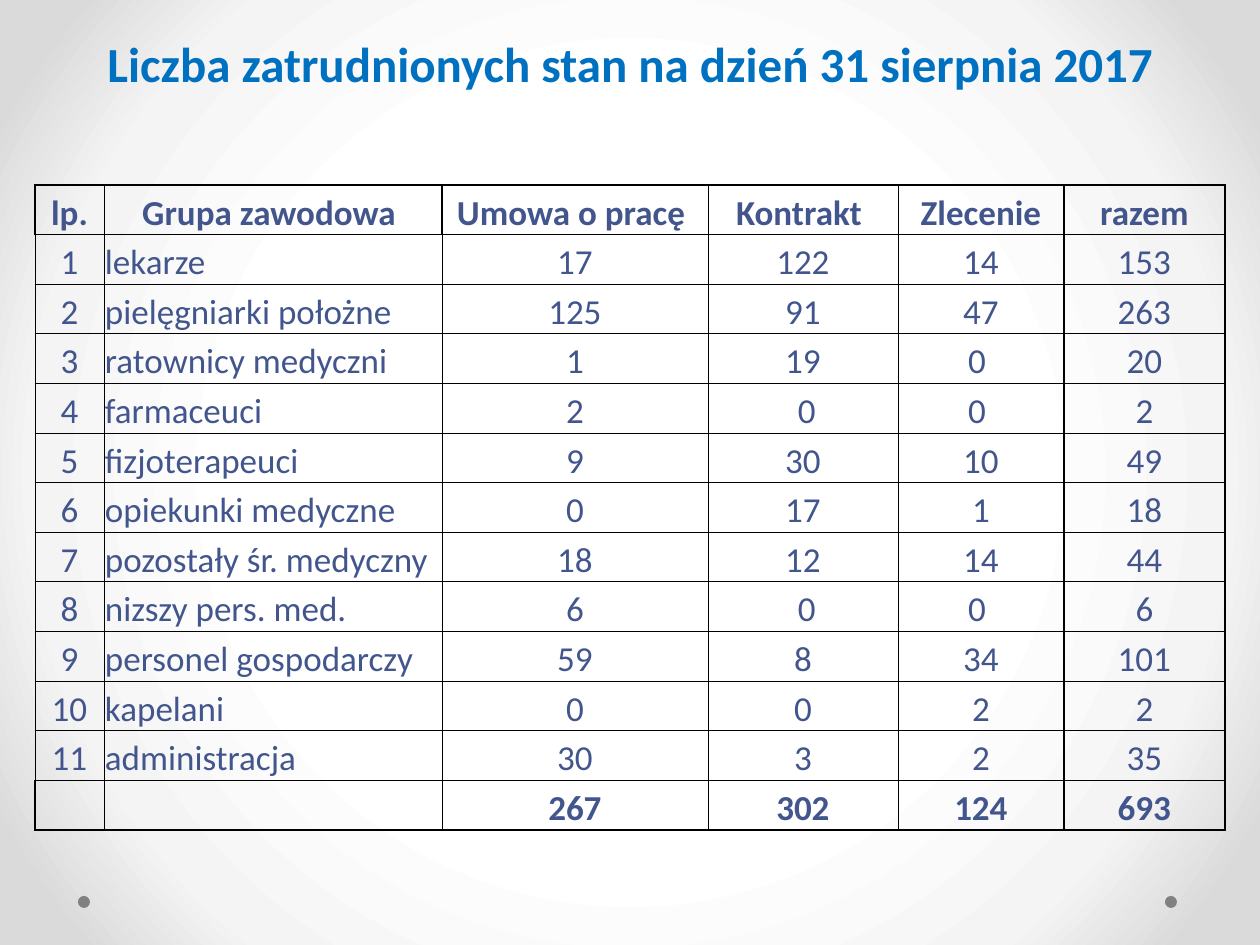
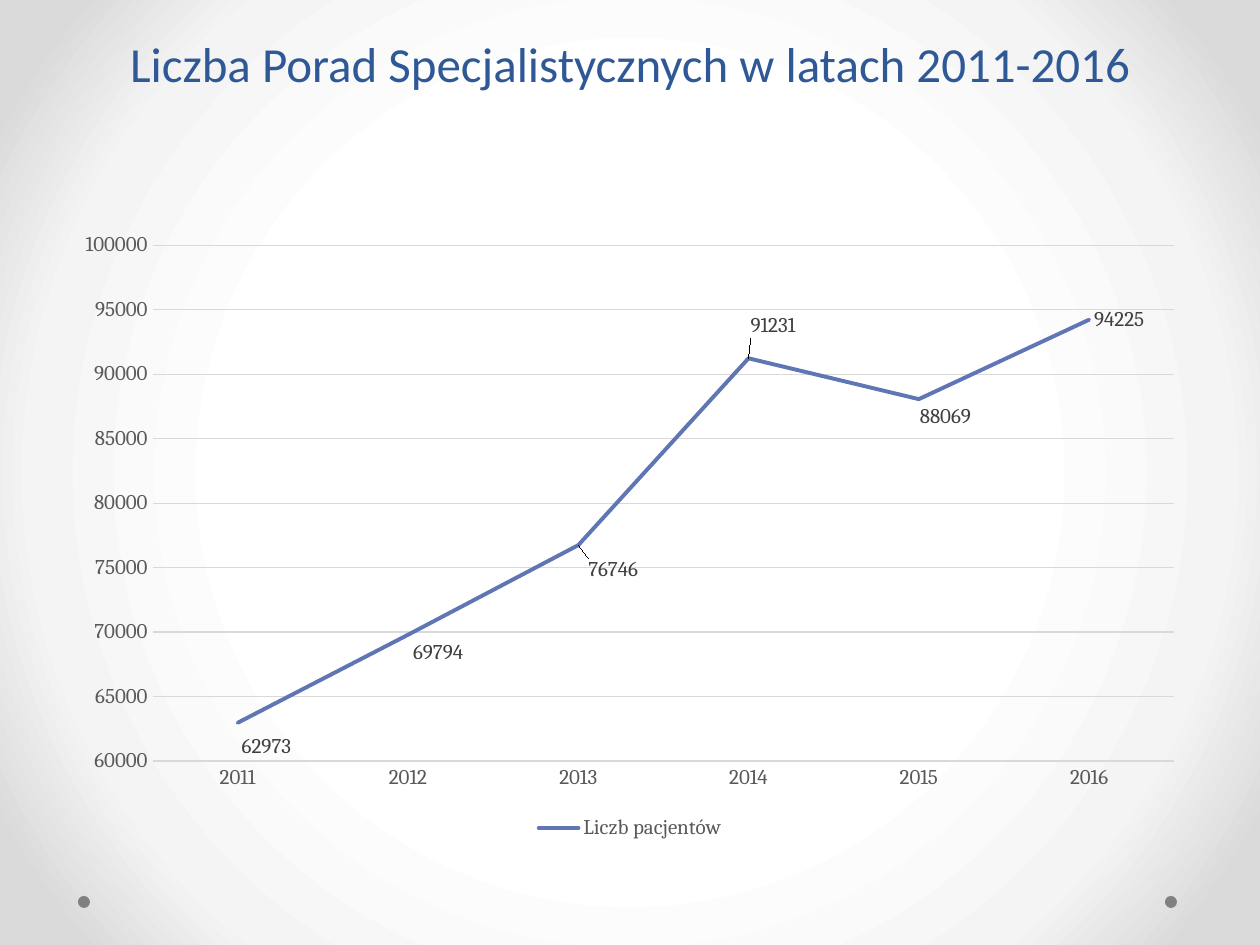
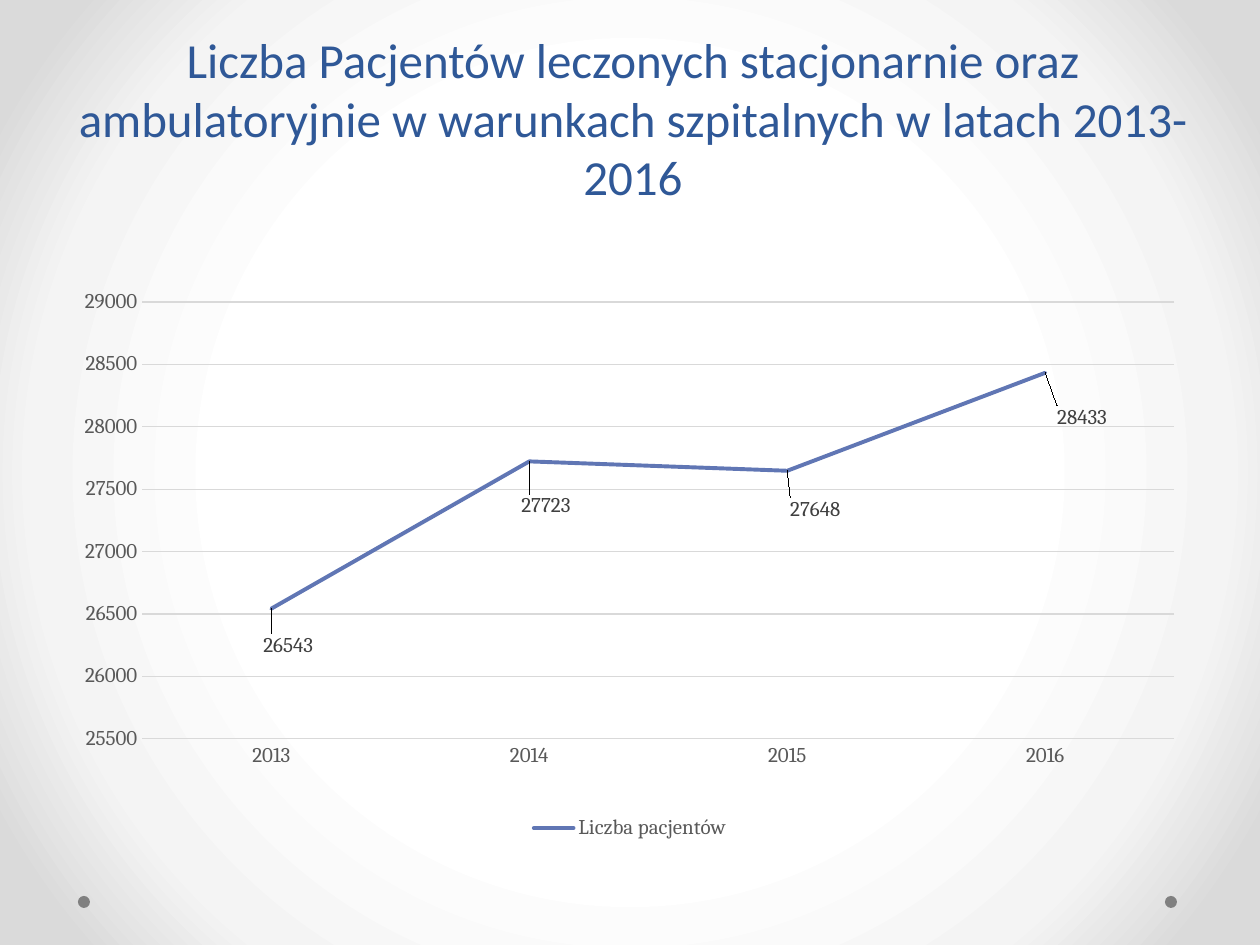
from dataclasses import dataclass

from pptx import Presentation
from pptx import util as u
from pptx.chart.data import CategoryChartData
from pptx.dml.color import RGBColor
from pptx.enum import chart as charts, shapes, text
from pptx.oxml import parse_xml
from pptx.oxml.ns import nsdecls

SCALE = 914400 / 126
COLORS = {
    "staff_title": "0070C0",
    "title": "2F5897",
    "cell": "42568D",
    "border": "000000",
    "dot": "808080",
    "axis": "595959",
    "grid": "D9D9D9",
    "trend": "6076B4",
    "value": "404040",
}
BACKGROUND = {50: "FFFFFF", 76: "F4F4F4", 92: "DADADA"}
DOT_LEFTS = (78, 1165)
DOT_TOP, DOT_SIZE = 896, 12
CHART_LEFT, CHART_TOP, CHART_WIDTH, CHART_HEIGHT = 63, 221, 1134, 624

COLUMN_WIDTHS = (69, 338, 266, 190, 166, 161)
HEADER = ("lp.", "Grupa zawodowa ", "Umowa o pracę ", "Kontrakt ", "Zlecenie", "razem")
STAFF = (
    ("lekarze", "17", "122", "14", "153"),
    ("pielęgniarki położne", "125", "91", "47", "263"),
    ("ratownicy medyczni", "1", "19", "0 ", "20"),
    ("farmaceuci", "2", " 0", "0 ", "2"),
    ("fizjoterapeuci", "9", "30", "10", "49"),
    ("opiekunki medyczne", "0", "17", "1", "18"),
    ("pozostały śr. medyczny", "18", "12", "14", "44"),
    ("nizszy pers. med.", "6", " 0", "0 ", "6"),
    ("personel gospodarczy", "59", "8", "34", "101"),
    ("kapelani", "0", "0", "2", "2"),
    ("administracja", "30", "3", "2", "35"),
)
TOTALS = ("", "", "267", "302", "124", "693")


@dataclass(frozen=True)
class Title:
    wording: str
    left: int = 63
    top: int = 0
    color: str = "title"
    bold: bool = False


@dataclass(frozen=True)
class Reading:
    year: str
    count: int
    shift_x: int = 0
    shift_y: int = 0


@dataclass(frozen=True)
class Trend:
    title: Title
    legend: str
    readings: tuple[Reading, ...]
    minimum: int | None = None
    plot_area: tuple[float, float, float, float] | None = None


TRENDS = (
    Trend(
        Title("Liczba Porad Specjalistycznych w latach 2011-2016"),
        "Liczb pacjentów",
        (
            Reading("2011", 62973, -1, 24),
            Reading("2012", 69794, 0, 18),
            Reading("2013", 76746, 5, 25),
            Reading("2014", 91231, -3, -32),
            Reading("2015", 88069, -4, 18),
            Reading("2016", 94225),
        ),
        minimum=60000,
    ),
    Trend(
        Title(
            "Liczba Pacjentów leczonych stacjonarnie oraz ambulatoryjnie "
            "w warunkach szpitalnych w latach 2013-2016",
            left=66,
            top=55,
        ),
        "Liczba pacjentów",
        (
            Reading("2013", 26543, -13, 37),
            Reading("2014", 27723, -13, 45),
            Reading("2015", 27648, -2, 39),
            Reading("2016", 28433, 7, 45),
        ),
        plot_area=(0.07, 0.13, 0.91, 0.7),
    ),
)


def px(length: int) -> u.Emu:
    return u.Emu(round(length * SCALE))


def rgb(name: str) -> RGBColor:
    return RGBColor.from_string(COLORS[name])


def style_font(font, size: int, color: str, face: str, bold: bool = False) -> None:
    font.size = u.Pt(size)
    font.name = face
    font.bold = bold
    font.color.rgb = rgb(color)


def style_line(line, color: str, width: float) -> None:
    line.color.rgb = rgb(color)
    line.width = u.Pt(width)


def set_background(master) -> None:
    master.background.fill.solid()
    properties = master.element.xpath(".//p:bgPr")[0]
    stops = "".join(
        f'<a:gs pos="{place * 1000}"><a:srgbClr val="{color}"/></a:gs>'
        for place, color in BACKGROUND.items()
    )
    gradient = parse_xml(
        f'<a:gradFill {nsdecls("a")} rotWithShape="1"><a:gsLst>{stops}</a:gsLst>'
        '<a:path path="circle"><a:fillToRect l="50000" t="50000" r="50000" b="50000"/>'
        "</a:path></a:gradFill>"
    )
    properties.replace(properties[0], gradient)


def add_page(deck, title: Title):
    slide = deck.slides.add_slide(deck.slide_layouts[6])
    for left in DOT_LEFTS:
        dot = slide.shapes.add_shape(
            shapes.MSO_SHAPE.OVAL, px(left), px(DOT_TOP), px(DOT_SIZE), px(DOT_SIZE)
        )
        dot.shadow.inherit = False
        dot.fill.solid()
        dot.fill.fore_color.rgb = rgb("dot")
        dot.line.fill.background()
    frame = slide.shapes.add_textbox(px(title.left), px(title.top), px(1134), px(125)).text_frame
    frame.word_wrap = True
    frame.vertical_anchor = text.MSO_ANCHOR.MIDDLE
    heading = frame.paragraphs[0]
    heading.text = title.wording
    heading.alignment = text.PP_ALIGN.CENTER
    style_font(heading.font, 28, title.color, "Calibri", title.bold)
    return slide


def add_borders(cell, row: int, column: int, last_row: int, last_column: int) -> None:
    def across(edge: int) -> bool:
        return edge in (0, 1, last_row, last_row + 1)

    def down(edge: int) -> bool:
        return (
            edge >= last_column
            or (edge == 0 and row in (0, last_row))
            or (edge == 2 and row == 0)
        )

    heavy = {"L": down(column), "R": down(column + 1), "T": across(row), "B": across(row + 1)}
    properties = cell._tc.get_or_add_tcPr()
    for position, (side, is_heavy) in enumerate(heavy.items()):
        width = u.Pt(1 if is_heavy else 0.5)
        border = parse_xml(
            f'<a:ln{side} {nsdecls("a")} w="{width}"><a:solidFill>'
            f'<a:srgbClr val="{COLORS["border"]}"/></a:solidFill></a:ln{side}>'
        )
        properties.insert(position, border)


def add_staff_table(slide) -> None:
    rows = [HEADER, *((str(n), *group) for n, group in enumerate(STAFF, 1)), TOTALS]
    last_row, last_column = len(rows) - 1, len(HEADER) - 1
    table = slide.shapes.add_table(
        len(rows), len(HEADER), px(35), px(185), px(sum(COLUMN_WIDTHS)), px(645)
    ).table
    table.first_row = table.horz_banding = False
    for column, width in zip(table.columns, COLUMN_WIDTHS):
        column.width = px(width)
    for r, row in enumerate(rows):
        for c, wording in enumerate(row):
            cell = table.cell(r, c)
            cell.margin_left = cell.margin_right = cell.margin_top = px(1)
            cell.margin_bottom = 0
            cell.vertical_anchor = text.MSO_ANCHOR.BOTTOM
            cell.fill.background()
            entry = cell.text_frame.paragraphs[0]
            entry.text = wording
            is_group = c == 1 and 0 < r < last_row
            entry.alignment = text.PP_ALIGN.LEFT if is_group else text.PP_ALIGN.CENTER
            style_font(entry.font, 20, "cell", "Calibri", r in (0, last_row))
            add_borders(cell, r, c, last_row, last_column)


def manual_layout(values: dict[str, float], inner: bool = False):
    target = '<c:layoutTarget val="inner"/><c:xMode val="edge"/><c:yMode val="edge"/>'
    sizes = "".join(f'<c:{key} val="{value:.4f}"/>' for key, value in values.items())
    return parse_xml(
        f'<c:layout {nsdecls("c")}><c:manualLayout>{target if inner else ""}{sizes}'
        "</c:manualLayout></c:layout>"
    )


def style_axes(chart, minimum: int | None) -> None:
    for axis in (chart.category_axis, chart.value_axis):
        axis.major_tick_mark = axis.minor_tick_mark = charts.XL_TICK_MARK.NONE
        style_font(axis.tick_labels.font, 12, "axis", "Cambria")
    style_line(chart.category_axis.format.line, "grid", 0.75)
    chart.value_axis.format.line.fill.background()
    chart.value_axis.has_major_gridlines = True
    style_line(chart.value_axis.major_gridlines.format.line, "grid", 0.75)
    if minimum is not None:
        chart.value_axis.minimum_scale = minimum


def add_value_labels(chart, series, readings: tuple[Reading, ...]) -> None:
    series.data_labels.show_value = True
    for index, reading in enumerate(readings):
        label = series.points[index].data_label
        style_font(label.font, 12, "value", "Cambria")
        label.position = charts.XL_LABEL_POSITION.RIGHT
    for label, reading in zip(chart.element.xpath(".//c:dLbl"), readings):
        shift = {"x": reading.shift_x / CHART_WIDTH, "y": reading.shift_y / CHART_HEIGHT}
        label.insert(1, manual_layout(shift))


def add_trend_chart(slide, trend: Trend) -> None:
    data = CategoryChartData()
    data.categories = [reading.year for reading in trend.readings]
    data.add_series(trend.legend, [reading.count for reading in trend.readings])
    chart = slide.shapes.add_chart(
        charts.XL_CHART_TYPE.LINE,
        px(CHART_LEFT), px(CHART_TOP), px(CHART_WIDTH), px(CHART_HEIGHT),
        data,
    ).chart
    chart.has_title = False
    chart.font.size = u.Pt(10)
    chart.font.name = "Cambria"
    chart.has_legend = True
    chart.legend.position = charts.XL_LEGEND_POSITION.BOTTOM
    chart.legend.include_in_layout = False
    style_font(chart.legend.font, 12, "axis", "Cambria")
    style_axes(chart, trend.minimum)
    plot = chart.plots[0]
    plot.vary_by_categories = False
    series = plot.series[0]
    series.smooth = False
    style_line(series.format.line, "trend", 2.25)
    series.format.line._get_or_add_ln().set("cap", "rnd")
    add_value_labels(chart, series, trend.readings)
    if trend.plot_area:
        area = chart.element.xpath(".//c:plotArea")[0]
        for automatic in area.xpath("./c:layout"):
            area.remove(automatic)
        area.insert(0, manual_layout(dict(zip("xywh", trend.plot_area)), inner=True))


def main() -> None:
    deck = Presentation()
    deck.slide_width, deck.slide_height = px(1260), px(945)
    set_background(deck.slide_master)
    staff_title = Title(
        "Liczba zatrudnionych stan na dzień 31 sierpnia 2017", color="staff_title", bold=True
    )
    add_staff_table(add_page(deck, staff_title))
    for trend in TRENDS:
        add_trend_chart(add_page(deck, trend.title), trend)
    deck.save("out.pptx")


if __name__ == "__main__":
    main()
